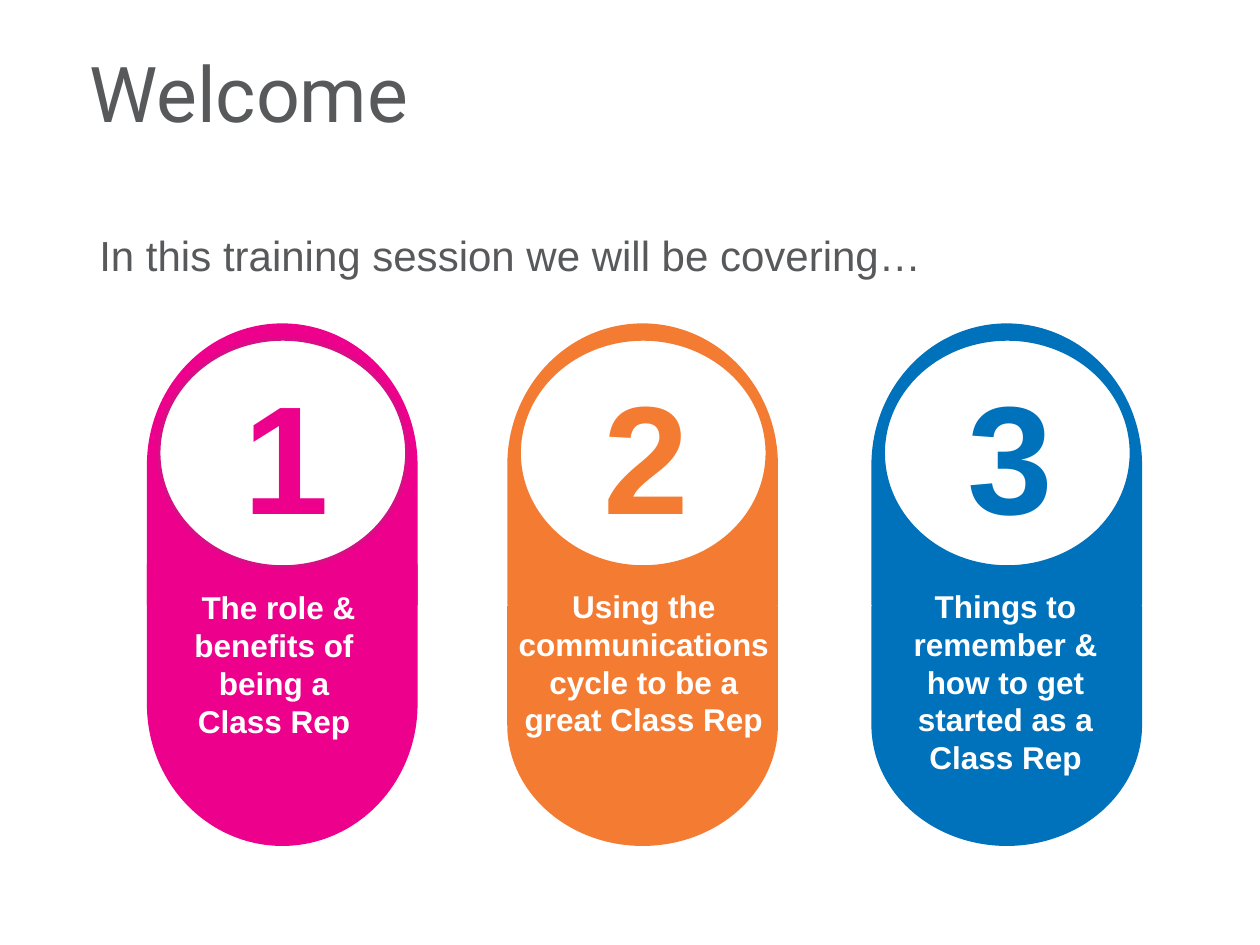
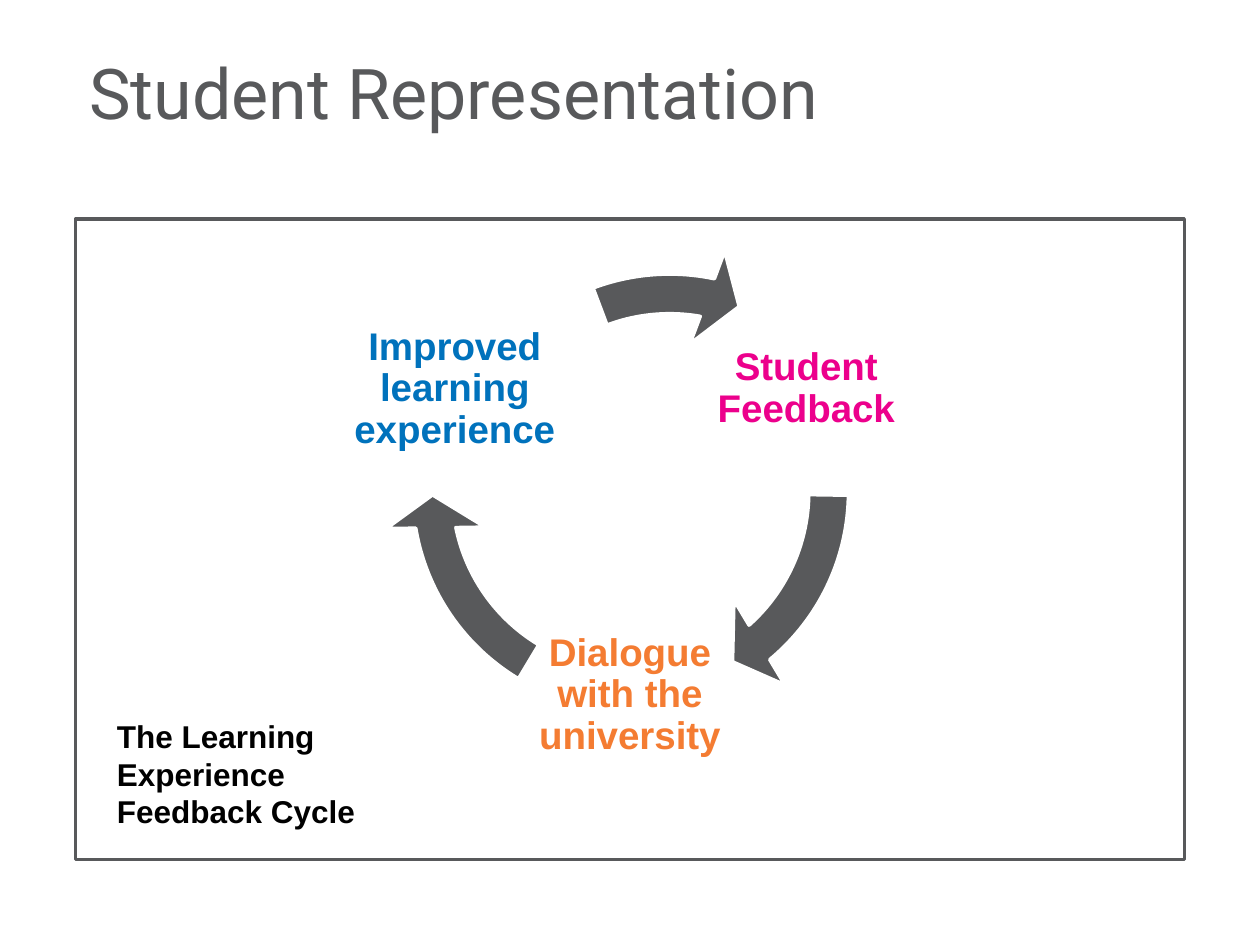
from pptx import Presentation
from pptx.dml.color import RGBColor
from pptx.enum.shapes import MSO_SHAPE
from pptx.enum.text import MSO_ANCHOR, PP_ALIGN
from pptx.util import Inches, Pt

COLOURS = {
    "white": "FFFFFF",
    "black": "000000",
    "grey": "58595B",
    "pink": "EC008C",
    "dark pink": "D80E86",
    "orange": "F47C32",
    "blue": "0072BC",
}
TITLE = {"name": "Roboto", "size": Pt(44)}
INTRO = {"name": "Arial", "size": Pt(24)}
NUMBER = {"name": "Arial", "size": Pt(88), "bold": True}
LABEL = {"name": "Arial", "size": Pt(18), "bold": True}
STAGE = {"name": "Arial", "size": Pt(22), "bold": True}
CENTRED = {"alignment": PP_ALIGN.CENTER}
STAGE_PARAGRAPH = {**CENTRED, "line_spacing": 0.9}
MIDDLE = {"word_wrap": True, "vertical_anchor": MSO_ANCHOR.MIDDLE}
TIGHT = {**MIDDLE, **{f"margin_{side}": Inches(0.03) for side in ("left", "top", "right", "bottom")}}

CAP_WIDTH = 2.12
CAP_HEIGHT = 2.22
PILL_TOP = 2.58
PILL_BOTTOM = 6.7


def colour(name):
    """Return the named colour."""
    return RGBColor.from_string(COLOURS[name])


def set_format(target, values):
    """Set each format value on the target."""
    for attribute, value in values.items():
        setattr(target, attribute, value)


def add_text(slide, box, lines, font, colour_name, paragraph_format=None, frame_format=None):
    """Add a text box with one paragraph for each line."""
    frame = slide.shapes.add_textbox(*map(Inches, box)).text_frame
    set_format(frame, frame_format or {"word_wrap": True})
    frame.text = "\n".join(lines)
    for paragraph in frame.paragraphs:
        set_format(paragraph, paragraph_format or {})
        set_format(paragraph.font, font)
        paragraph.font.color.rgb = colour(colour_name)


def add_filled_shape(slide, kind, box, fill, line):
    """Add a flat preset shape with a two point outline."""
    shape = slide.shapes.add_shape(kind, *map(Inches, box))
    shape.shadow.inherit = False
    shape.fill.solid()
    shape.fill.fore_color.rgb = colour(fill)
    shape.line.color.rgb = colour(line)
    shape.line.width = Pt(2)
    return shape


def add_titled_slide(presentation, title, size):
    """Add a blank slide with the shared title style."""
    slide = presentation.slides.add_slide(presentation.slide_layouts[6])
    add_text(slide, (0.61, 0.29, 6.7, 0.87), [title], {**TITLE, "size": Pt(size)}, "grey",
             frame_format=MIDDLE)
    return slide


def add_cap(slide, centre, top, height, rotation, colour_name):
    """Add a rounded pill end that occupies the given height once turned."""
    box = (centre - height / 2, top + (height - CAP_WIDTH) / 2, height, CAP_WIDTH)
    cap = add_filled_shape(slide, MSO_SHAPE.FLOWCHART_DELAY, box, colour_name, colour_name)
    cap.rotation = rotation


def add_pill(slide, number, left, lower_height, colour_name, ring, label_box, lines):
    """Add a numbered pill with its label."""
    centre = left + CAP_HEIGHT / 2
    add_cap(slide, centre, PILL_TOP, CAP_HEIGHT, 270, colour_name)
    add_cap(slide, centre, PILL_BOTTOM - lower_height, lower_height, 90, colour_name)
    add_filled_shape(slide, MSO_SHAPE.OVAL, (left + 0.13, 2.69, 1.97, 1.81), "white", ring)
    add_text(slide, (left + 0.1, 2.81, 2.08, 1.58), [number], NUMBER, colour_name, CENTRED)
    add_text(slide, label_box, lines, LABEL, "white", CENTRED)


def add_cycle_arrow(slide, left, end_angle, start_angle):
    """Add one curved arrow of the feedback cycle."""
    arrow = add_filled_shape(slide, MSO_SHAPE.CIRCULAR_ARROW, (left, 1.94, 3.93, 3.93),
                             "grey", "white")
    for index, value in enumerate((0.08, 5.76, end_angle, start_angle, 0.1)):
        arrow.adjustments[index] = value


def add_stage(slide, left, top, text, colour_name):
    """Add one stage name of the feedback cycle."""
    add_text(slide, (left, top, 1.66, 1.66), [text], STAGE, colour_name, STAGE_PARAGRAPH, TIGHT)


def build_welcome(presentation):
    """Build the slide with the three session topics."""
    slide = add_titled_slide(presentation, "Welcome", 44)
    pills = [
        ("1", 1.13, 2.22, "pink", "dark pink", (1, 4.62, 2.42, 1.31),
         ["The role & benefits of ", "being a ", "Class Rep "]),
        ("2", 3.99, 1.89, "orange", "orange", (3.96, 4.61, 2.3, 1.31),
         ["Using the communications cycle to be a great Class Rep"]),
        ("3", 6.88, 1.89, "blue", "blue", (6.87, 4.61, 2.22, 1.62),
         ["Things to remember & how to get started as a Class Rep"]),
    ]
    for pill in pills:
        add_pill(slide, *pill)
    add_text(slide, (0.69, 1.77, 6.79, 0.5), ["In this training session we will be covering…"],
             INTRO, "grey", frame_format={"word_wrap": False})


def build_representation(presentation):
    """Build the slide with the feedback cycle."""
    slide = add_titled_slide(presentation, "Student Representation", 40)
    add_filled_shape(slide, MSO_SHAPE.RECTANGLE, (0.6, 1.74, 8.8, 5.08), "white", "grey")
    stages = [
        (5.57, 2.26, "Student Feedback", "pink"),
        (4.17, 4.69, "Dialogue with the university", "orange"),
        (2.78, 2.26, "Improved learning experience", "blue"),
    ]
    arrows = [(3.04, 29.65, 0.51), (3.04, 101.74, 72.59), (3.35, 168.58, 149.66)]
    for stage, arrow in zip(stages, arrows):
        add_stage(slide, *stage)
        add_cycle_arrow(slide, *arrow)
    add_text(slide, (0.83, 5.64, 2.36, 1.01), ["The Learning Experience Feedback Cycle"],
             LABEL, "black")


def main():
    """Build and save the presentation."""
    presentation = Presentation()
    presentation.slide_width = Inches(10)
    presentation.slide_height = Inches(7.5)
    build_welcome(presentation)
    build_representation(presentation)
    presentation.save("out.pptx")


if __name__ == "__main__":
    main()
